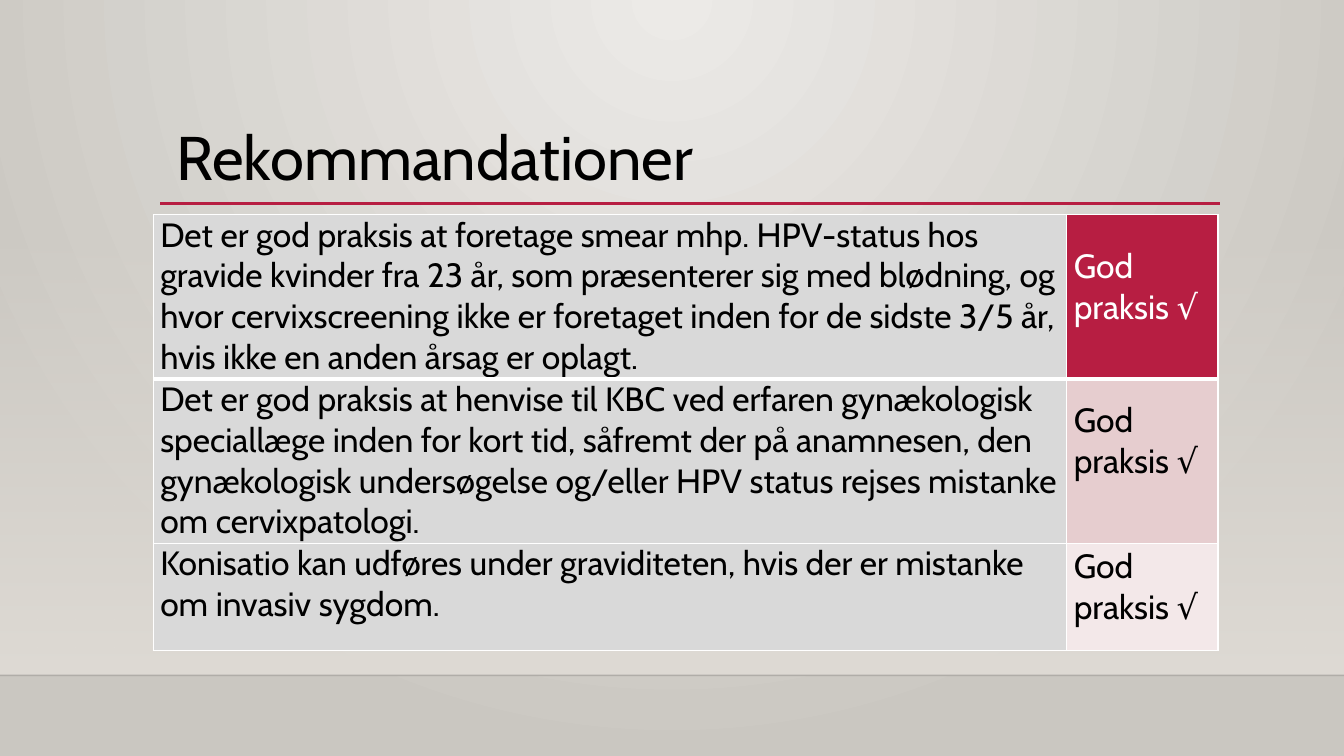
from lxml import etree
from pptx import Presentation
from pptx.dml.color import RGBColor
from pptx.enum.shapes import MSO_CONNECTOR, MSO_SHAPE
from pptx.enum.text import MSO_ANCHOR, MSO_AUTO_SIZE, PP_ALIGN
from pptx.oxml import parse_xml
from pptx.oxml.ns import nsdecls, qn
from pptx.util import Inches, Pt

RECTANGLE = MSO_SHAPE.RECTANGLE
STRAIGHT = MSO_CONNECTOR.STRAIGHT
TOP, MIDDLE = MSO_ANCHOR.TOP, MSO_ANCHOR.MIDDLE
LEFT = PP_ALIGN.LEFT
NO_AUTOFIT = MSO_AUTO_SIZE.NONE

FONT = "Cabin"
TITLE_ONLY = 5
BLACK = RGBColor(0x00, 0x00, 0x00)
WHITE = RGBColor(0xFF, 0xFF, 0xFF)
CRIMSON = RGBColor(0xB7, 0x1E, 0x42)
ROSE = RGBColor(0xE6, 0xCD, 0xCF)
PALE_ROSE = RGBColor(0xF3, 0xE8, 0xE9)
GREY = RGBColor(0xD9, 0xD9, 0xD9)
WALL_LIGHT = RGBColor(0xEC, 0xEA, 0xE7)
WALL_DARK = RGBColor(0xCA, 0xC7, 0xC1)
SAND = RGBColor(0xDF, 0xDB, 0xD5)

RADIAL = (
    '<a:path path="circle">'
    '<a:fillToRect l="43000" t="0" r="43000" b="100000"/></a:path>'
)
DOWNWARD = '<a:lin ang="5400000" scaled="0"/>'

COLUMN_WIDTHS = (9.06, 1.5)
GRADE = "God praksis √"
RECOMMENDATIONS = (
    ("Det er god praksis at foretage smear mhp. HPV-status hos gravide kvinder "
     "fra 23 år, som præsenterer sig med blødning, og hvor cervixscreening ikke "
     "er foretaget inden for de sidste 3/5 år, hvis ikke en anden årsag er oplagt.",
     1.63, CRIMSON, WHITE, 0.2),
    ("Det er god praksis at henvise til KBC ved erfaren gynækologisk speciallæge "
     "inden for kort tid, såfremt der på anamnesen, den gynækologisk undersøgelse "
     "og/eller HPV status rejses mistanke om cervixpatologi.",
     1.63, ROSE, BLACK, 0.4),
    ("Konisatio kan udføres under graviditeten, hvis der er mistanke om invasiv "
     "sygdom.",
     1.06, PALE_ROSE, BLACK, 0.2),
)


def set_gradient(fill, element, start, end, direction, start_alpha=100):
    """Give an element a two-stop gradient with the given direction."""
    fill.gradient()
    old = element.find(".//" + qn("a:gradFill"))
    new = parse_xml(
        f'<a:gradFill {nsdecls("a")} rotWithShape="1"><a:gsLst>'
        f'<a:gs pos="0"><a:srgbClr val="{start}">'
        f'<a:alpha val="{start_alpha * 1000}"/></a:srgbClr></a:gs>'
        f'<a:gs pos="100000"><a:srgbClr val="{end}"/></a:gs>'
        f'</a:gsLst>{direction}</a:gradFill>'
    )
    old.getparent().replace(old, new)


def add_band(page):
    """Add the wall band that fades in towards the floor."""
    band = page.shapes.add_shape(
        RECTANGLE, 0, Inches(2.21), Inches(13.33), Inches(4.49))
    band.shadow.inherit = False
    band.line.fill.background()
    set_gradient(band.fill, band.element, SAND, SAND, DOWNWARD, 0)


def add_rule(page, left, right, y, color, width, opacity=100):
    """Add a horizontal line."""
    rule = page.shapes.add_connector(
        STRAIGHT, Inches(left), Inches(y), Inches(right), Inches(y))
    rule.line.color.rgb = color
    rule.line.width = Pt(width)
    properties = rule.element.spPr
    etree.SubElement(properties, qn("a:effectLst"))
    if opacity < 100:
        color_element = properties.find(".//" + qn("a:srgbClr"))
        etree.SubElement(
            color_element, qn("a:alpha"), val=str(opacity * 1000))


def write_text(frame, text, size, color):
    """Write one formatted run into a text frame."""
    para = frame.paragraphs[0]
    para.alignment = LEFT
    span = para.add_run()
    span.text = text
    span.font.name = FONT
    span.font.size = Pt(size)
    span.font.bold = False
    span.font.color.rgb = color


def place_title(page):
    """Move and format the title placeholder."""
    title = page.shapes.title
    title.left, title.top = Inches(1.65), Inches(1.13)
    title.width, title.height = Inches(6.11), Inches(0.84)
    frame = title.text_frame
    frame.word_wrap = True
    frame.auto_size = NO_AUTOFIT
    frame.vertical_anchor = TOP
    write_text(frame, "Rekommandationer", 44, BLACK)


def set_borders(cell, top_width, bottom_width):
    """Draw white borders round a cell."""
    widths = {"L": 1, "R": 1, "T": top_width, "B": bottom_width}
    properties = cell._tc.get_or_add_tcPr()
    for index, (side, width) in enumerate(widths.items()):
        properties.insert(index, parse_xml(
            f'<a:ln{side} {nsdecls("a")} w="{Pt(width)}"><a:solidFill>'
            f'<a:srgbClr val="{WHITE}"/></a:solidFill></a:ln{side}>'))


def fill_cell(cell, text, fill, color, anchor, bottom):
    """Fill and write one table cell."""
    cell.fill.solid()
    cell.fill.fore_color.rgb = fill
    cell.vertical_anchor = anchor
    cell.margin_left = cell.margin_right = Inches(0.07)
    cell.margin_top, cell.margin_bottom = 0, Inches(bottom)
    write_text(cell.text_frame, text, 24, color)


def add_recommendations(page):
    """Add the table of recommendations and their grades."""
    table = page.shapes.add_table(
        len(RECOMMENDATIONS), len(COLUMN_WIDTHS), Inches(1.52), Inches(2.13),
        Inches(sum(COLUMN_WIDTHS)),
        Inches(sum(item[1] for item in RECOMMENDATIONS))).table
    table.first_row = table.horz_banding = False
    for column, width in zip(table.columns, COLUMN_WIDTHS):
        column.width = Inches(width)
    for index, (text, height, fill, color, bottom) in enumerate(RECOMMENDATIONS):
        row = table.rows[index]
        row.height = Inches(height)
        advice, grade = row.cells
        fill_cell(advice, text, GREY, BLACK, TOP, 0)
        fill_cell(grade, GRADE, fill, color, MIDDLE, bottom)
        for cell in (advice, grade):
            set_borders(cell, 3 if index == 1 else 1, 3 if index == 0 else 1)


def main():
    """Build the slide and save it."""
    deck = Presentation()
    deck.slide_width, deck.slide_height = Inches(13.33), Inches(7.5)
    page = deck.slides.add_slide(deck.slide_layouts[TITLE_ONLY])
    set_gradient(
        page.background.fill, page.element, WALL_LIGHT, WALL_DARK, RADIAL)
    add_band(page)
    add_rule(page, 0, 13.33, 6.7, BLACK, 1, 20)
    add_rule(page, 1.59, 12.1, 2.02, CRIMSON, 2.5)
    add_recommendations(page)
    place_title(page)
    deck.save("out.pptx")


if __name__ == "__main__":
    main()
